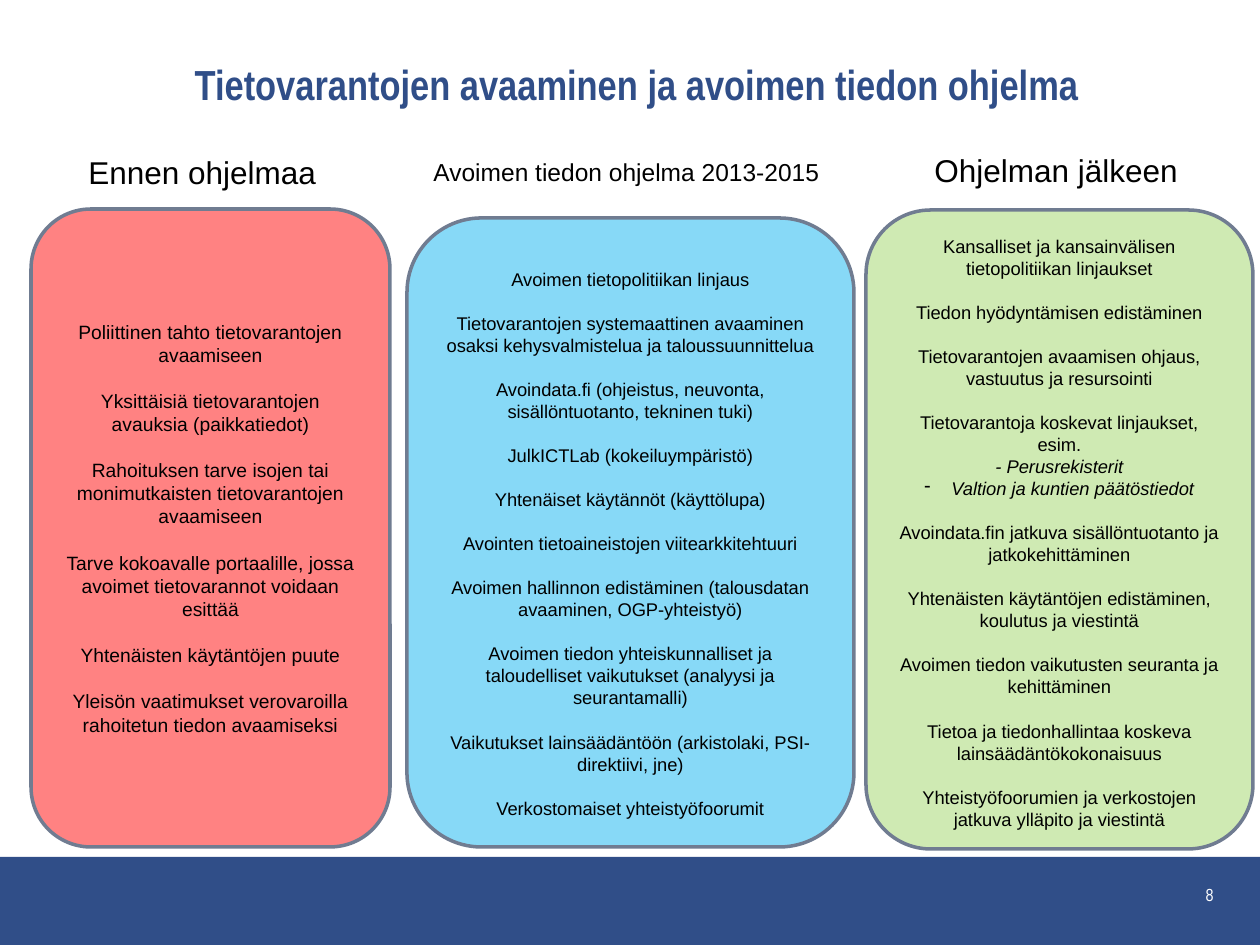
from lxml.etree import SubElement
from pptx import Presentation
from pptx.dml.color import RGBColor
from pptx.enum.shapes import MSO_SHAPE as Shape
from pptx.enum.text import MSO_ANCHOR as Anchor, PP_ALIGN as Align
from pptx.oxml.ns import qn
from pptx.util import Emu, Pt

PX = 914400 // 126
BLUE, WHITE, BLACK, OUTLINE = "304E88", "FFFFFF", "000000", "707C91"
TITLE = "Tietovarantojen avaaminen ja avoimen tiedon ohjelma"

# Headings: text, size, box in px, wrap
HEADINGS = [
    ("Ennen ohjelmaa", 18, (76, 147, 256, 50), False),
    ("Avoimen tiedon ohjelma 2013-2015", 14, (421, 151, 421, 84), True),
    ("Ohjelman jälkeen", 18, (922, 145, 271, 50), False),
]

# Panels: each item is a topic; a tuple holds a topic and its sub-points
PANELS = [
    dict(box=(31, 209, 359, 638), fill="FF0000", alpha=49, size=11,
         anchor=Anchor.MIDDLE, inset=6, topics=[
             "Poliittinen tahto tietovarantojen avaamiseen",
             "Yksittäisiä tietovarantojen avauksia (paikkatiedot)",
             "Rahoituksen tarve isojen tai monimutkaisten tietovarantojen avaamiseen",
             "Tarve kokoavalle portaalille, jossa avoimet tietovarannot voidaan esittää",
             "Yhtenäisten käytäntöjen puute",
             "Yleisön vaatimukset verovaroilla rahoitetun tiedon avaamiseksi",
         ]),
    dict(box=(407, 218, 447, 629), fill="00B0F0", alpha=47, size=10.5,
         anchor=Anchor.TOP, inset=28, topics=[
             "Avoimen tietopolitiikan linjaus",
             "Tietovarantojen systemaattinen avaaminen osaksi kehysvalmistelua ja taloussuunnittelua",
             "Avoindata.fi (ohjeistus, neuvonta, sisällöntuotanto, tekninen tuki)",
             "JulkICTLab (kokeiluympäristö)",
             "Yhtenäiset käytännöt (käyttölupa)",
             "Avointen tietoaineistojen viitearkkitehtuuri",
             "Avoimen hallinnon edistäminen (talousdatan avaaminen, OGP-yhteistyö)",
             "Avoimen tiedon yhteiskunnalliset ja taloudelliset vaikutukset (analyysi ja seurantamalli)",
             "Vaikutukset lainsäädäntöön (arkistolaki, PSI-direktiivi, jne)",
             "Verkostomaiset yhteistyöfoorumit",
         ]),
    dict(box=(866, 210, 387, 639), fill="92D050", alpha=43, size=10.5,
         anchor=Anchor.TOP, inset=6, topics=[
             "Kansalliset ja kansainvälisen tietopolitiikan linjaukset",
             "Tiedon hyödyntämisen edistäminen",
             "Tietovarantojen avaamisen ohjaus, vastuutus ja resursointi",
             ("Tietovarantoja koskevat linjaukset, esim.",
              [("- Perusrekisterit", False), ("Valtion ja kuntien päätöstiedot", True)]),
             "Avoindata.fin jatkuva sisällöntuotanto ja jatkokehittäminen",
             "Yhtenäisten käytäntöjen edistäminen, koulutus ja viestintä",
             "Avoimen tiedon vaikutusten seuranta ja kehittäminen",
             "Tietoa ja tiedonhallintaa koskeva lainsäädäntökokonaisuus",
             "Yhteistyöfoorumien ja verkostojen jatkuva ylläpito ja viestintä",
         ]),
]


def px(*lengths):
    return [Emu(length * PX) for length in lengths]


def color(value):
    return RGBColor.from_string(value)


def write(paragraph, text, size, ink=BLACK, font="Arial", align=Align.LEFT,
          bold=False, italic=False):
    paragraph.alignment = align
    run = paragraph.add_run()
    run.text = text
    run.font.size, run.font.name = Pt(size), font
    run.font.bold, run.font.italic = bold, italic
    run.font.color.rgb = color(ink)


def add_text(slide, box, text, size, wrap=True, anchor=Anchor.TOP, **style):
    frame = slide.shapes.add_textbox(*px(*box)).text_frame
    frame.word_wrap, frame.vertical_anchor = wrap, anchor
    write(frame.paragraphs[0], text, size, **style)


def add_shape(slide, kind, box, fill):
    shape = slide.shapes.add_shape(kind, *px(*box))
    shape.shadow.inherit = False
    shape.fill.solid()
    shape.fill.fore_color.rgb = color(fill)
    return shape


def add_dash(paragraph):
    properties = paragraph._p.get_or_add_pPr()
    indent = 27 * PX
    properties.set("marL", str(indent))
    properties.set("indent", str(-indent))
    SubElement(properties, qn("a:buChar"), char="-")


def add_panel(slide, box, fill, alpha, size, anchor, inset, topics):
    shape = add_shape(slide, Shape.ROUNDED_RECTANGLE, box, fill)
    tint = shape.fill._xPr.find(qn("a:solidFill"))[0]
    SubElement(tint, qn("a:alpha"), val=str(alpha * 1000))
    shape.line.color.rgb = color(OUTLINE)
    shape.line.width = Pt(2)

    frame = shape.text_frame
    frame.word_wrap, frame.vertical_anchor = True, anchor
    frame.margin_top = px(inset)[0]
    for index, topic in enumerate(topics):
        text, points = topic if isinstance(topic, tuple) else (topic, [])
        paragraph = frame.add_paragraph() if index else frame.paragraphs[0]
        if index:
            paragraph.space_before = Pt(size * 1.2)  # one line between topics
        write(paragraph, text, size, align=Align.CENTER)
        for point, dashed in points:
            paragraph = frame.add_paragraph()
            if dashed:
                add_dash(paragraph)
            write(paragraph, point, size, align=Align.CENTER, italic=True)


def main():
    presentation = Presentation()
    presentation.slide_width, presentation.slide_height = px(1260, 945)
    slide = presentation.slides.add_slide(presentation.slide_layouts[6])

    # Footer band and page number
    band = add_shape(slide, Shape.RECTANGLE, (0, 857, 1260, 88), BLUE)
    band.line.fill.background()
    add_text(slide, (1159, 878, 67, 29), "8", 10, ink=WHITE,
             font="Arial Narrow", align=Align.RIGHT)

    # Panels and their headings
    for panel in PANELS:
        add_panel(slide, **panel)
    for text, size, box, wrap in HEADINGS:
        add_text(slide, box, text, size, wrap)

    # Title
    add_text(slide, (43, 14, 1187, 101), TITLE, 24, anchor=Anchor.BOTTOM,
             ink=BLUE, font="Arial Narrow", align=Align.CENTER, bold=True)

    presentation.save("out.pptx")


if __name__ == "__main__":
    main()
